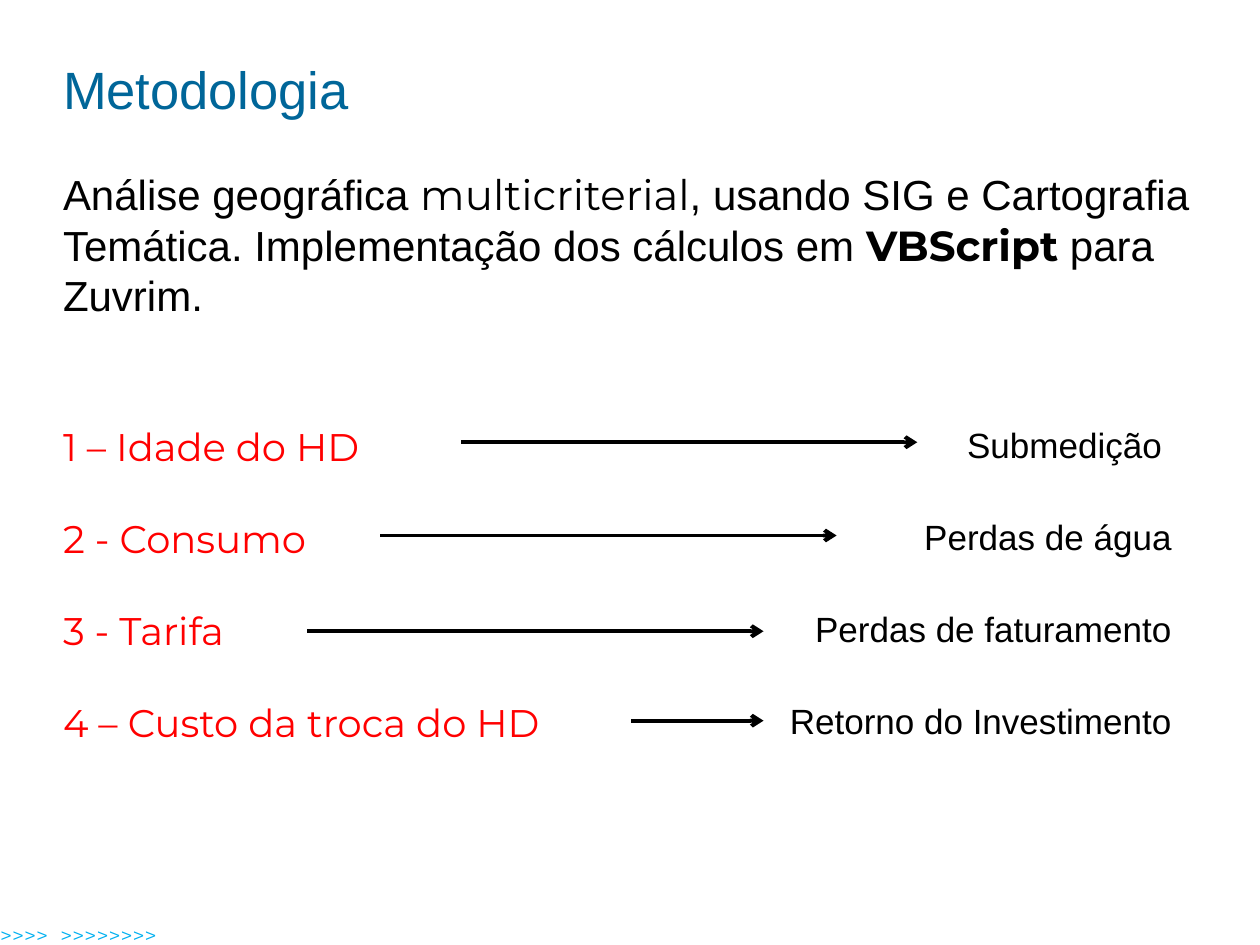
from lxml import etree
from pptx import Presentation
from pptx.dml.color import RGBColor
from pptx.enum.shapes import MSO_CONNECTOR
from pptx.enum.text import MSO_ANCHOR, PP_ALIGN
from pptx.oxml.ns import qn
from pptx.util import Inches, Pt

COLORS = {"title": "006699", "text": "000000", "criterion": "FF0000",
          "footer": "00B0F0", "background": "FFFFFF"}
SANS, DISPLAY = "Arial", "Montserrat"
LEFT = 0.5
ROW_STEP = 0.73
ROWS = [
    ("1 – Idade do HD", "Submedição ", 3.16, 6.78, 0.15),
    ("2 - Consumo", "Perdas de água", 2.52, 6.14, 0.16),
    ("3 - Tarifa", "Perdas de faturamento", 1.94, 5.56, 0.19),
    ("4 – Custo da troca do HD", "Retorno do Investimento", 4.51, 5.56, 0.17),
]


def fill_text(sp, runs, size, align=PP_ALIGN.LEFT, anchor=MSO_ANCHOR.TOP):
    tf = sp.text_frame
    tf.word_wrap = True
    tf.vertical_anchor = anchor
    tf.margin_left = tf.margin_right = tf.margin_top = tf.margin_bottom = 0
    p = tf.paragraphs[0]
    p.alignment = align
    for text, font, color, bold in runs:
        r = p.add_run()
        r.text = text
        r.font.name = font
        r.font.size = Pt(size)
        r.font.bold = bold
        r.font.color.rgb = RGBColor.from_string(COLORS[color])


def add_text(slide, x, y, w, h, runs, size, **layout):
    sp = slide.shapes.add_textbox(Inches(x), Inches(y), Inches(w), Inches(h))
    fill_text(sp, runs, size, **layout)


def add_arrow(slide, x1, x2, y):
    line = slide.shapes.add_connector(
        MSO_CONNECTOR.STRAIGHT, Inches(x1), Inches(y), Inches(x2), Inches(y))
    line.line.width = Pt(2.25)
    line.line.color.rgb = RGBColor.from_string(COLORS["text"])
    ln = line.line._get_or_add_ln()
    etree.SubElement(ln, qn("a:tailEnd"), type="arrow")
    etree.SubElement(line._element.spPr, qn("a:effectLst"))


def add_title(slide, x, y, w, h):
    sp = slide.shapes.title
    sp.left, sp.top, sp.width, sp.height = map(Inches, (x, y, w, h))
    fill_text(sp, [("Metodologia", SANS, "title", False)], 30,
              anchor=MSO_ANCHOR.MIDDLE)


def add_summary(slide, x, y, w, h):
    add_text(slide, x, y, w, h, [
        ("Análise geográfica ", SANS, "text", False),
        ("multicriterial", DISPLAY, "text", False),
        (", usando SIG e Cartografia Temática. Implementação dos cálculos em ",
         SANS, "text", False),
        ("VBScript", DISPLAY, "text", True),
        (" para Zuvrim.", SANS, "text", False),
    ], 24)


def add_criteria(slide, x, y, w, row_h):
    effect_w = 3.59
    for i, (criterion, effect, start, end, drop) in enumerate(ROWS):
        top = y + i * ROW_STEP
        add_text(slide, x, top, 4.81, row_h,
                 [(criterion, DISPLAY, "criterion", False)], 22)
        add_text(slide, x + w - effect_w, top, effect_w, row_h,
                 [(effect, SANS, "text", False)], 20, align=PP_ALIGN.RIGHT)
        add_arrow(slide, x + start, x + end, top + drop)


def add_footer(slide, x, y, w, h):
    add_text(slide, x, y, w, h, [
        (">" * 4, DISPLAY, "footer", False),
        (">", DISPLAY, "background", False),
        (">" * 8, DISPLAY, "footer", False),
    ], 12, anchor=MSO_ANCHOR.MIDDLE)


def main():
    prs = Presentation()
    prs.slide_width, prs.slide_height = Inches(10), Inches(7.5)
    slide = prs.slides.add_slide(prs.slide_layouts[5])
    add_title(slide, LEFT, 0.3, 9, 0.8)
    add_summary(slide, LEFT, 1.34, 9.02, 1.31)
    add_criteria(slide, LEFT, 3.36, 8.8, 0.64)
    add_footer(slide, 0, 7.35, 1.61, 0.15)
    prs.save("out.pptx")


if __name__ == "__main__":
    main()
